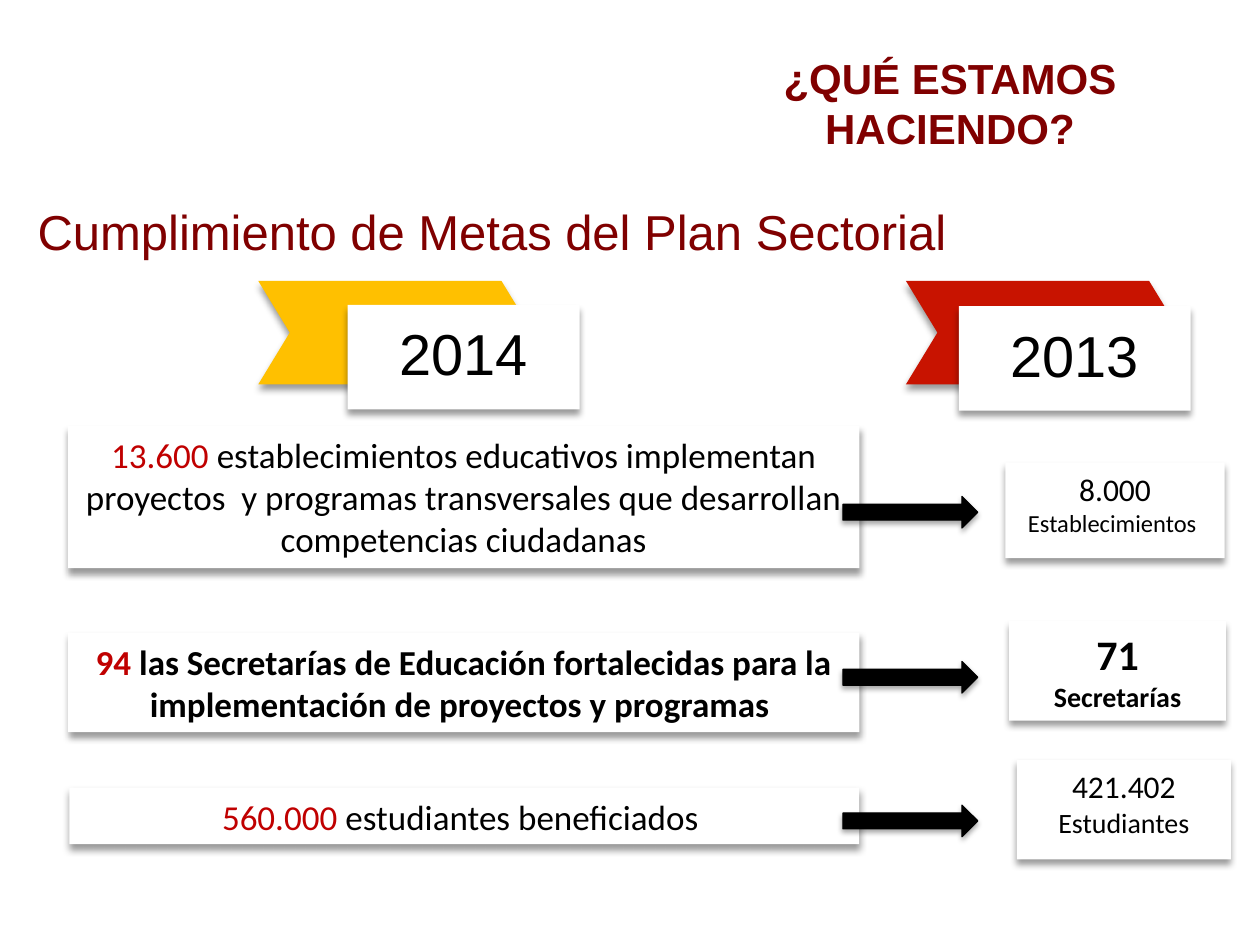
from lxml import etree
from pptx import Presentation
from pptx import util as u
from pptx.dml.color import RGBColor
from pptx.enum import shapes, text
from pptx.oxml import ns

MAROON = RGBColor(0x80, 0x00, 0x00)
CRIMSON = RGBColor(0xC0, 0x00, 0x00)
RED = RGBColor(0xC8, 0x13, 0x00)
GOLD = RGBColor(0xFF, 0xC0, 0x00)
BLACK = RGBColor(0x00, 0x00, 0x00)
WHITE = RGBColor(0xFF, 0xFF, 0xFF)

ARROW_LEFT, ARROW_WIDTH, ARROW_HEIGHT = 6.69, 1.07, 0.25
PLATE_WIDTH, PLATE_HEIGHT = 1.84, 0.83
RIBBON_WIDTH, RIBBON_HEIGHT, RIBBON_NOTCH = 2.18, 0.82, 0.25

GOALS = [
    {
        "goal_box": (0.54, 3.38, 6.28, 1.13),
        "goal": ("13.600", " establecimientos educativos implementan proyectos  y programas "
                 "transversales que desarrollan competencias ciudadanas"),
        "arrow_top": 3.94,
        "before_box": (7.98, 3.67, 1.74, 0.76),
        "before": (("8.000", 18), ("Establecimientos ", 14)),
        "bold": False,
    },
    {
        "goal_box": (0.54, 5.02, 6.28, 0.79),
        "goal": ("94", " las Secretarías de Educación fortalecidas para la "
                 "implementación de proyectos y programas "),
        "arrow_top": 5.25,
        "before_box": (8.01, 4.93, 1.72, 0.79),
        "before": (("71", 24), ("Secretarías", 16)),
        "bold": True,
    },
    {
        "goal_box": (0.55, 6.25, 6.27, 0.45),
        "goal": ("560.000 ", "estudiantes beneficiados "),
        "arrow_top": 6.39,
        "before_box": (8.07, 6.03, 1.7, 0.79),
        "before": (("421.402", 18), ("Estudiantes", 16)),
        "bold": False,
    },
]


def inches(*lengths):
    """Turn numbers into lengths in inches."""
    return [u.Inches(length) for length in lengths]


def add_run(paragraph, words, size, color, font="Calibri", bold=False):
    """Add one formatted run to a paragraph."""
    run = paragraph.add_run()
    run.text = words
    run.font.name, run.font.size, run.font.bold = font, u.Pt(size), bold
    run.font.color.rgb = color


def paint(shape, color, opacity=40, blur=4, distance=3):
    """Give a shape a plain fill, no line and a shadow straight below."""
    shape.fill.solid()
    shape.fill.fore_color.rgb = color
    shape.line.fill.background()
    shape.shadow.inherit = False
    effects = shape._element.spPr.find(ns.qn("a:effectLst"))
    shadow = etree.SubElement(effects, ns.qn("a:outerShdw"), blurRad=str(u.Pt(blur)),
                              dist=str(u.Pt(distance)), dir="5400000", rotWithShape="0")
    tint = etree.SubElement(shadow, ns.qn("a:srgbClr"), val=str(BLACK))
    etree.SubElement(tint, ns.qn("a:alpha"), val=str(opacity * 1000))


def add_card(container, box, anchor=text.MSO_ANCHOR.TOP):
    """Add a white shadowed card and return its text frame."""
    card = container.add_shape(shapes.MSO_SHAPE.RECTANGLE, *inches(*box))
    paint(card, WHITE)
    frame = card.text_frame
    frame.word_wrap = True
    frame.vertical_anchor = anchor
    frame.margin_left = frame.margin_right = u.Inches(0.12)
    frame.margin_top = frame.margin_bottom = u.Inches(0.06)
    frame.paragraphs[0].alignment = text.PP_ALIGN.CENTER
    return frame


def add_heading(slide, title_box, subtitle_box):
    """Place the slide title and the subtitle line."""
    title = slide.shapes.title
    title.left, title.top, title.width, title.height = inches(*title_box)
    title.text_frame.word_wrap = True
    title.text_frame.vertical_anchor = text.MSO_ANCHOR.MIDDLE
    question = title.text_frame.paragraphs[0]
    question.alignment = text.PP_ALIGN.CENTER
    add_run(question, "¿QUÉ ESTAMOS HACIENDO?", 24, MAROON, "Arial", True)

    subtitle = slide.shapes.add_textbox(*inches(*subtitle_box)).text_frame
    subtitle.word_wrap = True
    add_run(subtitle.paragraphs[0], "Cumplimiento de Metas del Plan Sectorial",
            28, MAROON, "Arial")


def add_year(slide, left, top, plate_dx, plate_dy, year, color):
    """Place a notched ribbon with a year plate over it."""
    group = slide.shapes.add_group_shape().shapes
    right, bottom = left + RIBBON_WIDTH, top + RIBBON_HEIGHT
    middle = top + RIBBON_HEIGHT / 2
    outline = [(right - RIBBON_NOTCH, top), (right, middle), (right - RIBBON_NOTCH, bottom),
               (left, bottom), (left + RIBBON_NOTCH, middle)]
    builder = group.build_freeform(*inches(left, top))
    builder.add_line_segments([inches(*point) for point in outline], close=True)
    paint(builder.convert_to_shape(), color)

    plate = add_card(group, (left + plate_dx, top + plate_dy, PLATE_WIDTH, PLATE_HEIGHT),
                     text.MSO_ANCHOR.MIDDLE)
    plate.paragraphs[0].line_spacing = 0.9
    add_run(plate.paragraphs[0], year, 33, BLACK, "Arial")


def add_goal(slide, goal_box, goal, arrow_top, before_box, before, bold):
    """Place a goal, the earlier figure and the arrow between them."""
    figure, description = goal
    sentence = add_card(slide.shapes, goal_box).paragraphs[0]
    add_run(sentence, figure, 20, CRIMSON, bold=bold)
    add_run(sentence, description, 20, BLACK, bold=bold)

    frame = add_card(slide.shapes, before_box)
    for index, (words, size) in enumerate(before):
        line = frame.add_paragraph() if index else frame.paragraphs[0]
        line.alignment = text.PP_ALIGN.CENTER
        add_run(line, words, size, BLACK, bold=bold)

    arrow = slide.shapes.add_shape(shapes.MSO_SHAPE.RIGHT_ARROW, *inches(
        ARROW_LEFT, arrow_top, ARROW_WIDTH, ARROW_HEIGHT))
    paint(arrow, BLACK, 35, 3.1, 1.8)
    arrow.line.color.rgb = BLACK
    arrow.line.width = u.Pt(0.75)


def main():
    """Build the slide and save it."""
    deck = Presentation()
    deck.slide_width, deck.slide_height = inches(10, 7.5)
    slide = deck.slides.add_slide(deck.slide_layouts.get_by_name("Title Only"))
    add_heading(slide, (5.16, 0.36, 4.76, 0.91), (0.2, 1.55, 9.58, 0.57))
    add_year(slide, 2.05, 2.23, 0.71, 0.19, "2014", GOLD)
    add_year(slide, 7.19, 2.23, 0.42, 0.2, "2013", RED)
    for goal in GOALS:
        add_goal(slide, **goal)
    deck.save("out.pptx")


if __name__ == "__main__":
    main()
